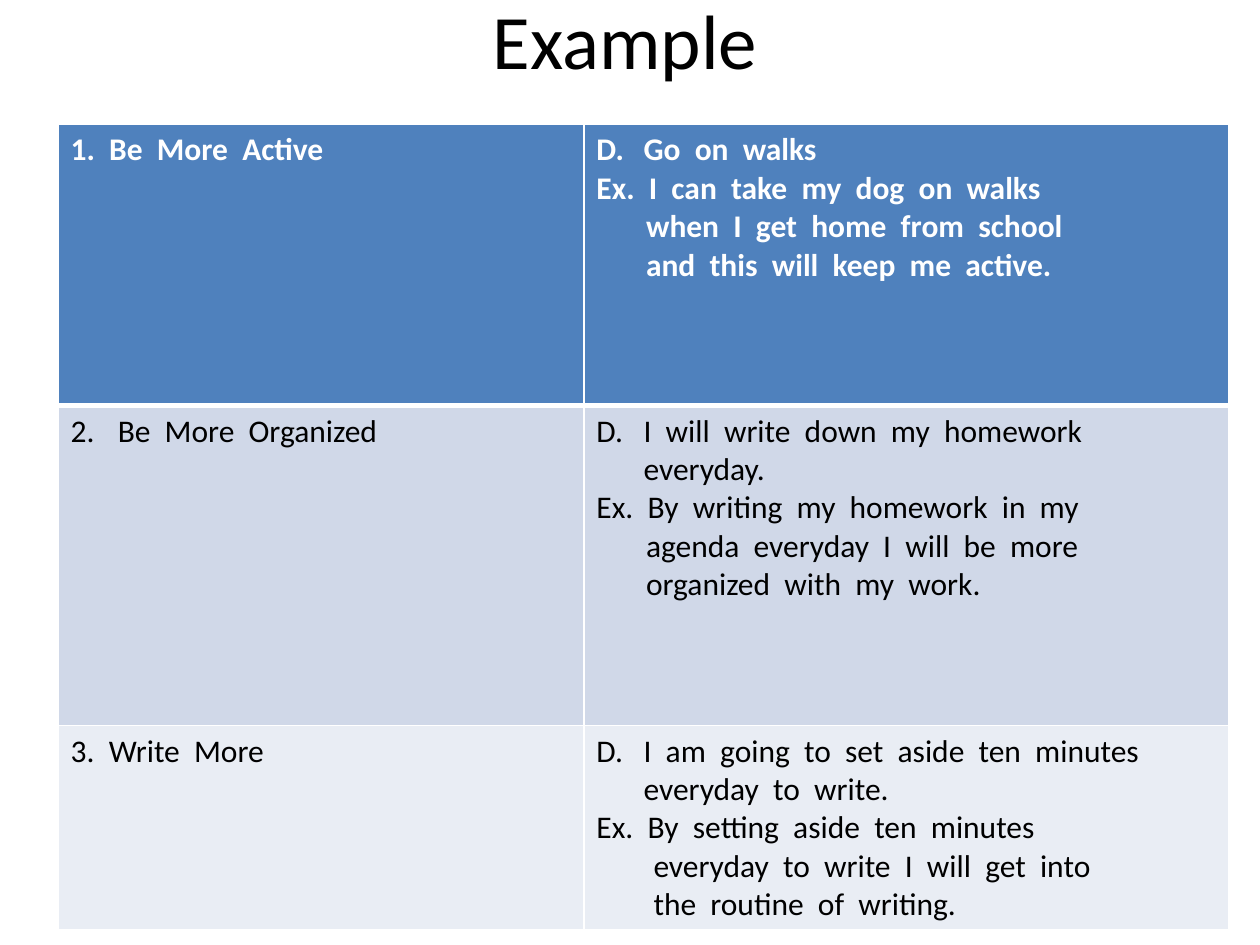
from dataclasses import dataclass

from lxml import etree
from pptx import Presentation
from pptx.dml.color import RGBColor
from pptx.enum.text import MSO_ANCHOR, PP_ALIGN
from pptx.oxml.ns import qn
from pptx.util import Cm, Pt

MIDDLE = MSO_ANCHOR.MIDDLE
CENTER = PP_ALIGN.CENTER
BLACK = RGBColor(0x00, 0x00, 0x00)
WHITE = RGBColor(0xFF, 0xFF, 0xFF)
BLUE = RGBColor(0x4F, 0x81, 0xBD)
BAND_DARK = RGBColor(0xD0, 0xD8, 0xE8)
BAND_LIGHT = RGBColor(0xE9, 0xED, 0xF4)
FONT = "Calibri"
LETTERS = "alphaUcPeriod"
NUMBERS = "arabicPeriod"
HANGING = Cm(0.95)
THIN, THICK = Pt(1), Pt(3)


@dataclass
class Line:
    text: str
    margin: int = 0
    numbering: str = ""
    start: int = 1


@dataclass
class Goal:
    name: Line
    detail: str
    example: list[str]
    example_margin: int
    height: int
    fill: RGBColor
    color: RGBColor = BLACK
    bold: bool = False
    top: int = THIN
    bottom: int = THIN

    def plan(self) -> list[Line]:
        first, *rest = self.example
        return [
            Line(self.detail, HANGING, LETTERS, 4),
            Line(first),
            *(Line(text, self.example_margin) for text in rest),
        ]


GOALS = [
    Goal(
        Line("1.  Be  More  Active"),
        "Go  on  walks",
        [
            "Ex.  I  can  take  my  dog  on  walks",
            "when  I  get  home  from  school",
            "and  this  will  keep  me  active.",
        ],
        Cm(1), Cm(5.67), BLUE, WHITE, bold=True, bottom=THICK,
    ),
    Goal(
        Line("Be  More  Organized", HANGING, NUMBERS, 2),
        "I  will  write  down  my  homework  everyday.",
        [
            "Ex.  By  writing  my  homework  in  my",
            "agenda  everyday  I  will  be  more",
            "organized  with  my  work.",
        ],
        Cm(1), Cm(6.45), BAND_DARK, top=THICK,
    ),
    Goal(
        Line("3.  Write  More"),
        "I  am  going  to  set  aside  ten  minutes  everyday  to  write.",
        [
            "Ex.  By  setting  aside  ten  minutes",
            "everyday  to  write  I  will  get  into",
            "the  routine  of  writing.",
        ],
        Cm(1.15), Cm(4.12), BAND_LIGHT,
    ),
]


def set_borders(cell, top: int, bottom: int) -> None:
    properties = cell._tc.get_or_add_tcPr()
    for side, width in (("L", THIN), ("R", THIN), ("T", top), ("B", bottom)):
        border = etree.SubElement(properties, qn(f"a:ln{side}"), w=str(width))
        solid = etree.SubElement(border, qn("a:solidFill"))
        etree.SubElement(solid, qn("a:srgbClr"), val=str(WHITE))


def style_font(paragraph, size: int, color: RGBColor, bold: bool = False) -> None:
    font = paragraph.font
    font.name = FONT
    font.size = size
    font.bold = bold
    font.color.rgb = color


def write_line(paragraph, line: Line, goal: Goal) -> None:
    paragraph.text = line.text
    properties = paragraph._p.get_or_add_pPr()
    properties.set("marL", str(line.margin))
    properties.set("indent", str(-line.margin if line.numbering else 0))
    if line.numbering:
        etree.SubElement(properties, qn("a:buFont"), typeface="+mj-lt")
        etree.SubElement(properties, qn("a:buAutoNum"),
                         type=line.numbering, startAt=str(line.start))
    style_font(paragraph, Pt(18), goal.color, goal.bold)


def fill_cell(cell, lines: list[Line], goal: Goal) -> None:
    set_borders(cell, goal.top, goal.bottom)
    cell.fill.solid()
    cell.fill.fore_color.rgb = goal.fill
    frame = cell.text_frame
    for index, line in enumerate(lines):
        paragraph = frame.add_paragraph() if index else frame.paragraphs[0]
        write_line(paragraph, line, goal)


def add_title(slide, text: str) -> None:
    frame = slide.shapes.add_textbox(Cm(1.17), Cm(-0.81), Cm(22.86), Cm(3.18)).text_frame
    frame.word_wrap = True
    frame.vertical_anchor = MIDDLE
    heading = frame.paragraphs[0]
    heading.text = text
    heading.alignment = CENTER
    style_font(heading, Pt(44), BLACK)


def add_goals(slide, goals: list[Goal]) -> None:
    height = sum(goal.height for goal in goals)
    table = slide.shapes.add_table(
        len(goals), 2, Cm(1.17), Cm(2.51), Cm(23.6), height).table
    table.first_row = False
    table.horz_banding = False
    for column, width in zip(table.columns, (Cm(10.6), Cm(13))):
        column.width = width
    for row, goal in zip(table.rows, goals):
        row.height = goal.height
        for cell, lines in zip(row.cells, ([goal.name], goal.plan())):
            fill_cell(cell, lines, goal)


def main() -> None:
    presentation = Presentation()
    presentation.slide_width = Cm(25.4)
    presentation.slide_height = Cm(19.05)
    slide = presentation.slides.add_slide(presentation.slide_layouts[6])
    add_title(slide, "Example")
    add_goals(slide, GOALS)
    presentation.save("out.pptx")


if __name__ == "__main__":
    main()
